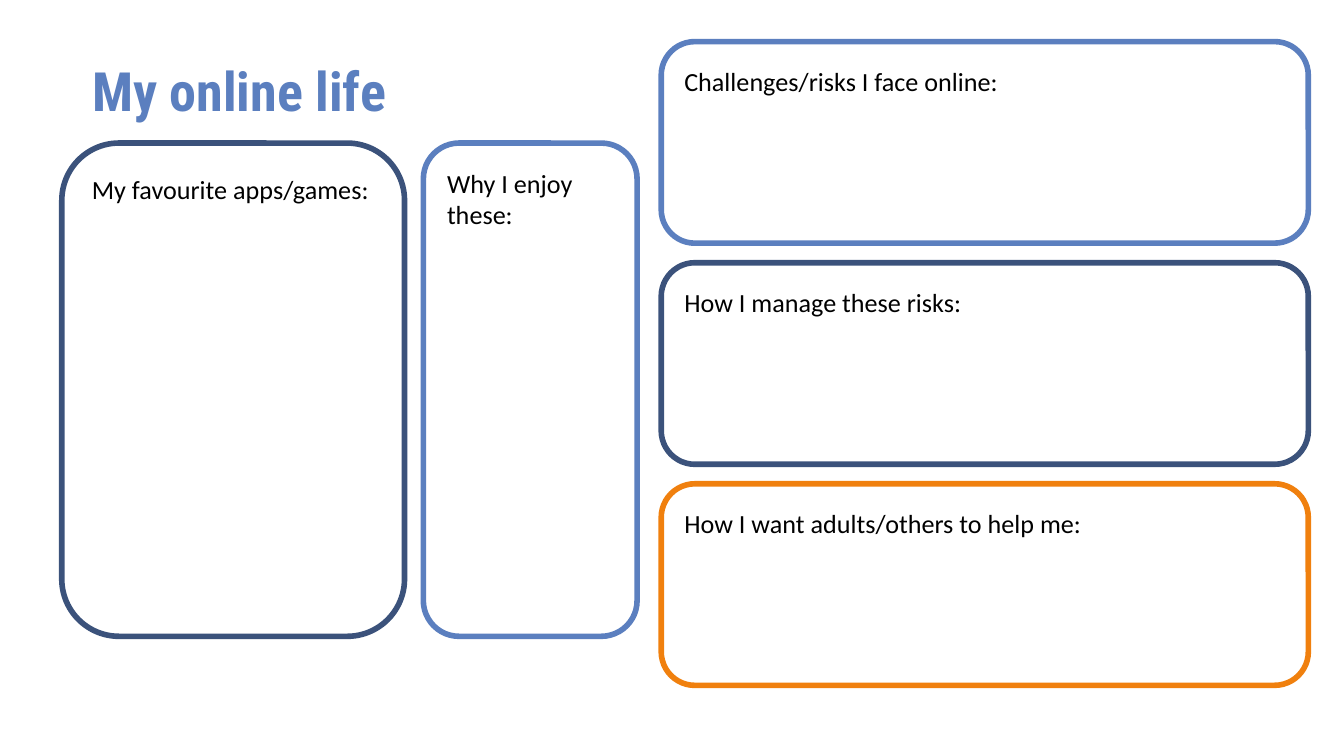
from dataclasses import dataclass

from pptx import Presentation
from pptx import util as u
from pptx.dml.color import RGBColor
from pptx.enum import shapes, text

SCALE = 4572  # EMU in one px, 200 px to the inch


@dataclass(frozen=True)
class Theme:
    navy: str = "3B527B"
    blue: str = "5B7FBF"
    orange: str = "F0800E"
    black: str = "000000"
    head: str = "Roboto Condensed"
    body: str = "Calibri"
    head_size: int = 29
    body_size: int = 14
    border: int = 3
    corner: float = 0.167


THEME = Theme()

SLIDE = (2000, 1125)
TITLE = "My online life"
TITLE_BOX = (123, 73, 1754, 134)

# Tall panels: label, colour, left, width
TALL = [
    ("My favourite apps/games:", THEME.navy, 92, 510),
    ("Why I enjoy these:", THEME.blue, 630, 318),
]
TALL_TOP, TALL_HIGH = 213, 734

# Wide panels, stacked from the top: label, colour
WIDE = [
    ("Challenges/risks I face online:", THEME.blue),
    ("How I manage these risks:", THEME.navy),
    ("How I want adults/others to help me:", THEME.orange),
]
WIDE_LEFT, WIDE_TOP, WIDE_WIDTH, WIDE_HIGH = 984, 62, 963, 300
WIDE_STEP = 329


def px(*sizes):
    return [u.Emu(size * SCALE) for size in sizes]


def inset(frame, side, edge):
    frame.margin_left = frame.margin_right = px(side)[0]
    frame.margin_top = frame.margin_bottom = px(edge)[0]


def write(frame, words, face, size, colour, bold=False):
    """Put one left-aligned run in the frame's first paragraph."""
    frame.word_wrap = True
    para = frame.paragraphs[0]
    para.alignment = text.PP_ALIGN.LEFT
    run = para.add_run()
    run.text = words
    run.font.name = face
    run.font.size = u.Pt(size)
    run.font.bold = bold
    run.font.color.rgb = RGBColor.from_string(colour)
    return para


def add_title(slide):
    title = slide.shapes.title
    title.left, title.top, title.width, title.height = px(*TITLE_BOX)
    frame = title.text_frame
    frame.auto_size = text.MSO_AUTO_SIZE.NONE
    frame.vertical_anchor = text.MSO_ANCHOR.MIDDLE
    inset(frame, 14, 8)
    para = write(frame, TITLE, THEME.head, THEME.head_size, THEME.blue, True)
    para.line_spacing = 0.9


def add_panel(slide, label, colour, box):
    panel = slide.shapes.add_shape(
        shapes.MSO_SHAPE.ROUNDED_RECTANGLE, *px(*box))
    panel.adjustments[0] = THEME.corner
    panel.shadow.inherit = False
    panel.fill.background()
    panel.line.color.rgb = RGBColor.from_string(colour)
    panel.line.width = u.Pt(THEME.border)
    frame = panel.text_frame
    frame.vertical_anchor = text.MSO_ANCHOR.TOP
    inset(frame, 20, 20)
    write(frame, label, THEME.body, THEME.body_size, THEME.black)


def main():
    deck = Presentation()
    deck.slide_width, deck.slide_height = px(*SLIDE)
    slide = deck.slides.add_slide(deck.slide_layouts.get_by_name("Title Only"))
    add_title(slide)
    for label, colour, left, width in TALL:
        add_panel(slide, label, colour, (left, TALL_TOP, width, TALL_HIGH))
    for row, (label, colour) in enumerate(WIDE):
        top = WIDE_TOP + row * WIDE_STEP
        add_panel(slide, label, colour,
                  (WIDE_LEFT, top, WIDE_WIDTH, WIDE_HIGH))
    deck.save("out.pptx")


if __name__ == "__main__":
    main()
